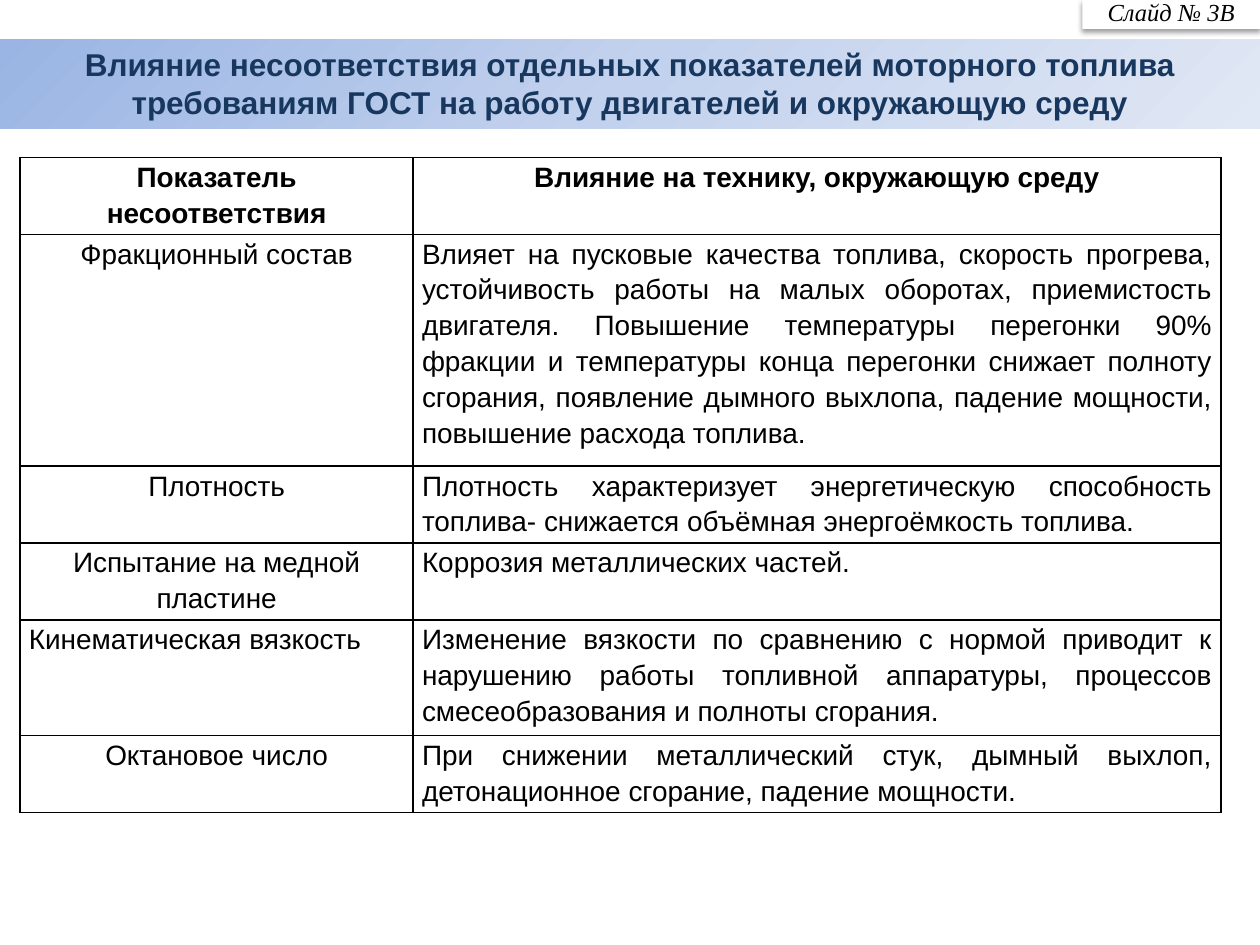
"""Build the slide on how off-standard motor fuel affects engines and the environment."""
from copy import deepcopy

from lxml import etree
from pptx import Presentation
from pptx.dml.color import RGBColor
from pptx.enum import shapes, text
from pptx.oxml import ns
from pptx.util import Inches, Pt

TITLE = ("Влияние несоответствия отдельных показателей моторного топлива "
         "требованиям ГОСТ на работу двигателей и окружающую среду")
TAG = "Слайд № 3В"

CENTER, JUSTIFY = text.PP_ALIGN.CENTER, text.PP_ALIGN.JUSTIFY
HEADER = (["Показатель", "несоответствия"], ["Влияние на технику, окружающую среду"])
ROWS = [
    ("Фракционный состав", CENTER, 1.84,
     "Влияет на пусковые качества топлива, скорость прогрева, устойчивость работы на малых "
     "оборотах, приемистость двигателя. Повышение температуры перегонки 90% фракции и "
     "температуры конца перегонки снижает полноту сгорания, появление дымного выхлопа, "
     "падение мощности, повышение расхода топлива."),
    ("Плотность", CENTER, 0.61,
     "Плотность характеризует энергетическую способность топлива- снижается объёмная "
     "энергоёмкость топлива."),
    ("Испытание на медной пластине", CENTER, 0.61, "Коррозия металлических частей."),
    ("Кинематическая вязкость", JUSTIFY, 0.92,
     "Изменение вязкости по сравнению с нормой приводит к нарушению работы топливной "
     "аппаратуры, процессов смесеобразования и полноты сгорания."),
    ("Октановое число", CENTER, 0.61,
     "При снижении металлический стук, дымный выхлоп, детонационное сгорание, "
     "падение мощности."),
]
HEADER_HEIGHT = 0.61
COLUMNS = (3.12, 6.41)
TABLE_LEFT, TABLE_TOP = 0.16, 1.25

THEME = {
    "sans": "Arial", "serif": "Times New Roman",
    "title": "17375E", "ink": "000000", "paper": "FFFFFF",
    "gradient": ((0, "9AB5E4"), (0.5, "C2D1ED"), (1, "E1E8F5")),
    "title_size": 18, "table_size": 16, "tag_size": 14, "border": 1,
}


def color(name):
    return RGBColor.from_string(THEME[name])


def write(paragraph, words, size, ink="ink", face="sans", align=CENTER, bold=False, italic=False):
    paragraph.alignment = align
    run = paragraph.add_run()
    run.text = words
    font = run.font
    font.name, font.size = THEME[face], Pt(THEME[size])
    font.bold, font.italic = bold, italic
    font.color.rgb = color(ink)


def add_box(slide, left, top, width, height):
    shape = slide.shapes.add_shape(
        shapes.MSO_SHAPE.RECTANGLE, Inches(left), Inches(top), Inches(width), Inches(height))
    shape.shadow.inherit = False
    shape.line.fill.background()
    shape.text_frame.word_wrap = True
    return shape


def add_title(slide):
    shape = add_box(slide, 0, 0.31, 10, 0.71)
    shape.fill.gradient()
    shape.fill.gradient_angle = 315
    stop_list = shape._element.spPr.find(".//" + ns.qn("a:gsLst"))
    stop_list.insert(1, deepcopy(stop_list[0]))
    for stop, (position, value) in zip(shape.fill.gradient_stops, THEME["gradient"]):
        stop.position = position
        stop.color.rgb = RGBColor.from_string(value)
    shape.text_frame.vertical_anchor = text.MSO_ANCHOR.TOP
    write(shape.text_frame.paragraphs[0], TITLE, "title_size", "title", bold=True)


def add_tag(slide):
    shape = add_box(slide, 8.59, 0, 1.41, 0.23)
    shape.fill.solid()
    shape.fill.fore_color.rgb = color("paper")
    effects = shape._element.spPr.find(ns.qn("a:effectLst"))
    shadow = etree.SubElement(effects, ns.qn("a:outerShdw"), blurRad=str(Pt(3.1)),
                              dist=str(Pt(1.6)), dir="5400000", rotWithShape="0")
    shade = etree.SubElement(shadow, ns.qn("a:srgbClr"), val=THEME["ink"])
    etree.SubElement(shade, ns.qn("a:alpha"), val="38000")
    frame = shape.text_frame
    frame.margin_top = frame.margin_bottom = 0
    frame.vertical_anchor = text.MSO_ANCHOR.MIDDLE
    frame.paragraphs[0].line_spacing = 0.8
    write(frame.paragraphs[0], TAG, "tag_size", face="serif", italic=True)


def add_borders(cell):
    properties = cell._tc.get_or_add_tcPr()
    for index, side in enumerate(("lnL", "lnR", "lnT", "lnB")):
        line = etree.Element(ns.qn("a:" + side), w=str(Pt(THEME["border"])))
        fill = etree.SubElement(line, ns.qn("a:solidFill"))
        etree.SubElement(fill, ns.qn("a:srgbClr"), val=THEME["ink"])
        properties.insert(index, line)


def fill_cell(cell, lines, align, bold=False):
    cell.margin_left = cell.margin_right = Inches(0.07)
    cell.margin_top = cell.margin_bottom = 0
    cell.fill.background()
    add_borders(cell)
    frame = cell.text_frame
    for index, words in enumerate(lines):
        paragraph = frame.add_paragraph() if index else frame.paragraphs[0]
        paragraph.line_spacing = 1.15
        write(paragraph, words, "table_size", align=align, bold=bold)


def add_effects_table(slide):
    heights = [HEADER_HEIGHT] + [height for _, _, height, _ in ROWS]
    table = slide.shapes.add_table(
        len(heights), len(COLUMNS), Inches(TABLE_LEFT), Inches(TABLE_TOP),
        Inches(sum(COLUMNS)), Inches(sum(heights))).table
    for column, width in zip(table.columns, COLUMNS):
        column.width = Inches(width)
    for row, height in zip(table.rows, heights):
        row.height = Inches(height)
    for index, lines in enumerate(HEADER):
        fill_cell(table.cell(0, index), lines, CENTER, bold=True)
    for index, (name, align, _, effect) in enumerate(ROWS, 1):
        fill_cell(table.cell(index, 0), [name], align)
        fill_cell(table.cell(index, 1), [effect], JUSTIFY)


def main():
    presentation = Presentation()
    presentation.slide_width, presentation.slide_height = Inches(10), Inches(7.5)
    slide = presentation.slides.add_slide(presentation.slide_layouts[6])
    add_title(slide)
    add_effects_table(slide)
    add_tag(slide)
    presentation.save("out.pptx")


if __name__ == "__main__":
    main()
